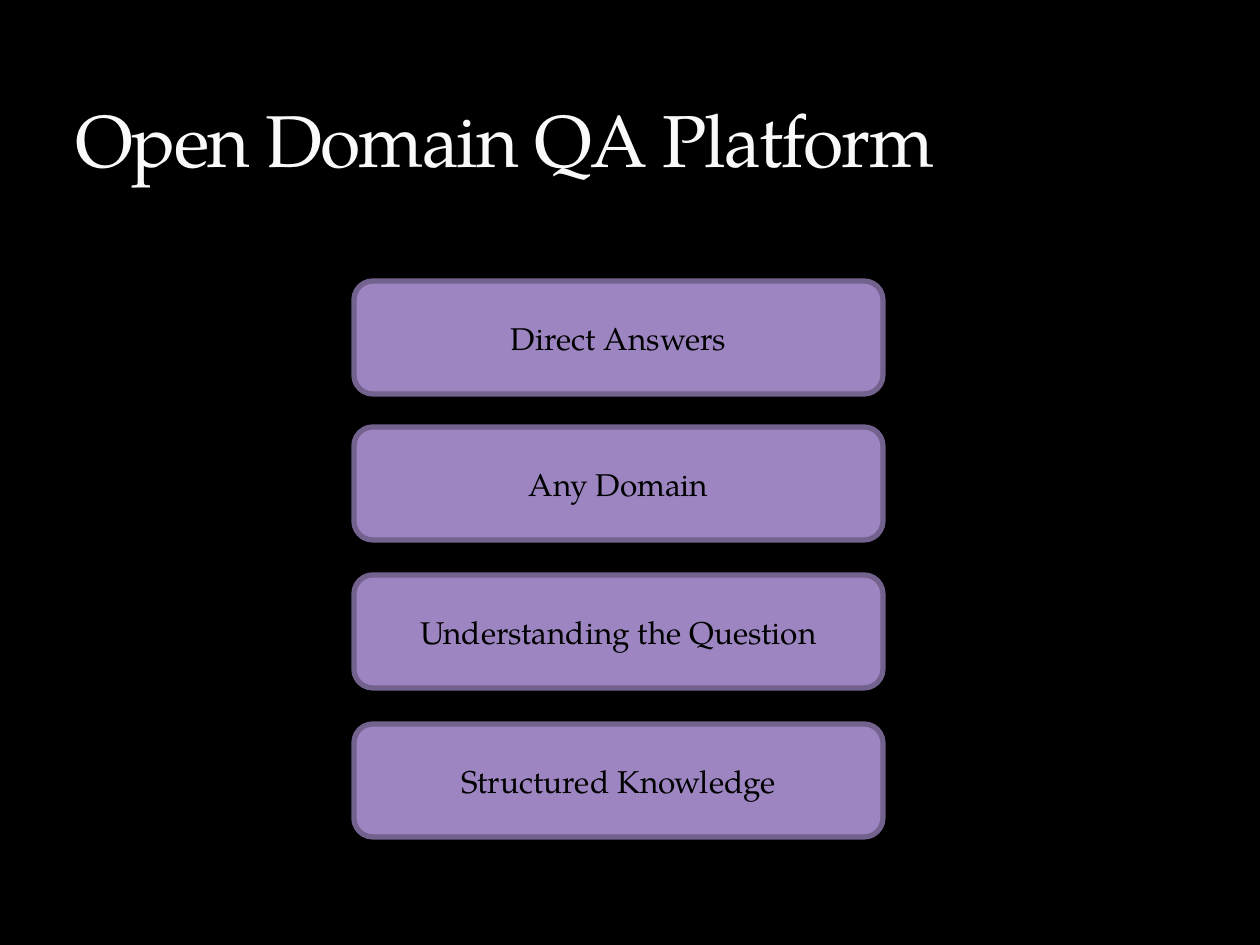
from pptx import Presentation
from pptx.dml.color import RGBColor
from pptx.enum.shapes import MSO_SHAPE
from pptx.enum.text import MSO_ANCHOR, PP_ALIGN
from pptx.util import Pt

SCALE = 914400 / 126
FONT = "TeX Gyre Pagella"
FEATURES = [
    ("Direct Answers", 0),
    ("Any Domain", 146),
    ("Understanding the Question", 294),
    ("Structured Knowledge", 443),
]


def px(length):
    """Turn pixels into EMU."""
    return round(length * SCALE)


def color(value):
    """Turn a hex string into a colour."""
    return RGBColor.from_string(value)


def write(shape, text, size, hue, align, anchor):
    """Set one formatted line of text and return its run."""
    frame = shape.text_frame
    frame.text = text
    frame.word_wrap = True
    frame.vertical_anchor = anchor
    para = frame.paragraphs[0]
    para.alignment = align
    span = para.runs[0]
    span.font.name = FONT
    span.font.size = Pt(size)
    span.font.color.rgb = color(hue)
    return span


def add_title(page, left, top, width, height):
    """Place the title in its box."""
    title = page.shapes.title
    title.left, title.top = px(left), px(top)
    title.width, title.height = px(width), px(height)
    span = write(title, "Open Domain QA Platform", 42, "F9F9F9",
                 PP_ALIGN.LEFT, MSO_ANCHOR.BOTTOM)
    span.font._element.set("spc", "-100")


def add_features(page, left, top, width, height):
    """Stack the feature boxes below the given top edge."""
    for label, offset in FEATURES:
        box = page.shapes.add_shape(MSO_SHAPE.ROUNDED_RECTANGLE, px(left),
                                    px(top + offset), px(width), px(height))
        box.shadow.inherit = False
        box.fill.solid()
        box.fill.fore_color.rgb = color("9C85C0")
        box.line.color.rgb = color("73628E")
        box.line.width = Pt(3)
        write(box, label, 18, "000000", PP_ALIGN.CENTER, MSO_ANCHOR.MIDDLE)


def main():
    """Build and save the deck."""
    deck = Presentation()
    deck.slide_width, deck.slide_height = px(1260), px(945)
    page = deck.slides.add_slide(deck.slide_layouts[5])
    page.background.fill.solid()
    page.background.fill.fore_color.rgb = color("000000")
    add_title(page, 63, 21, 1134, 168)
    add_features(page, 354, 281, 529, 113)
    deck.save("out.pptx")


if __name__ == "__main__":
    main()
